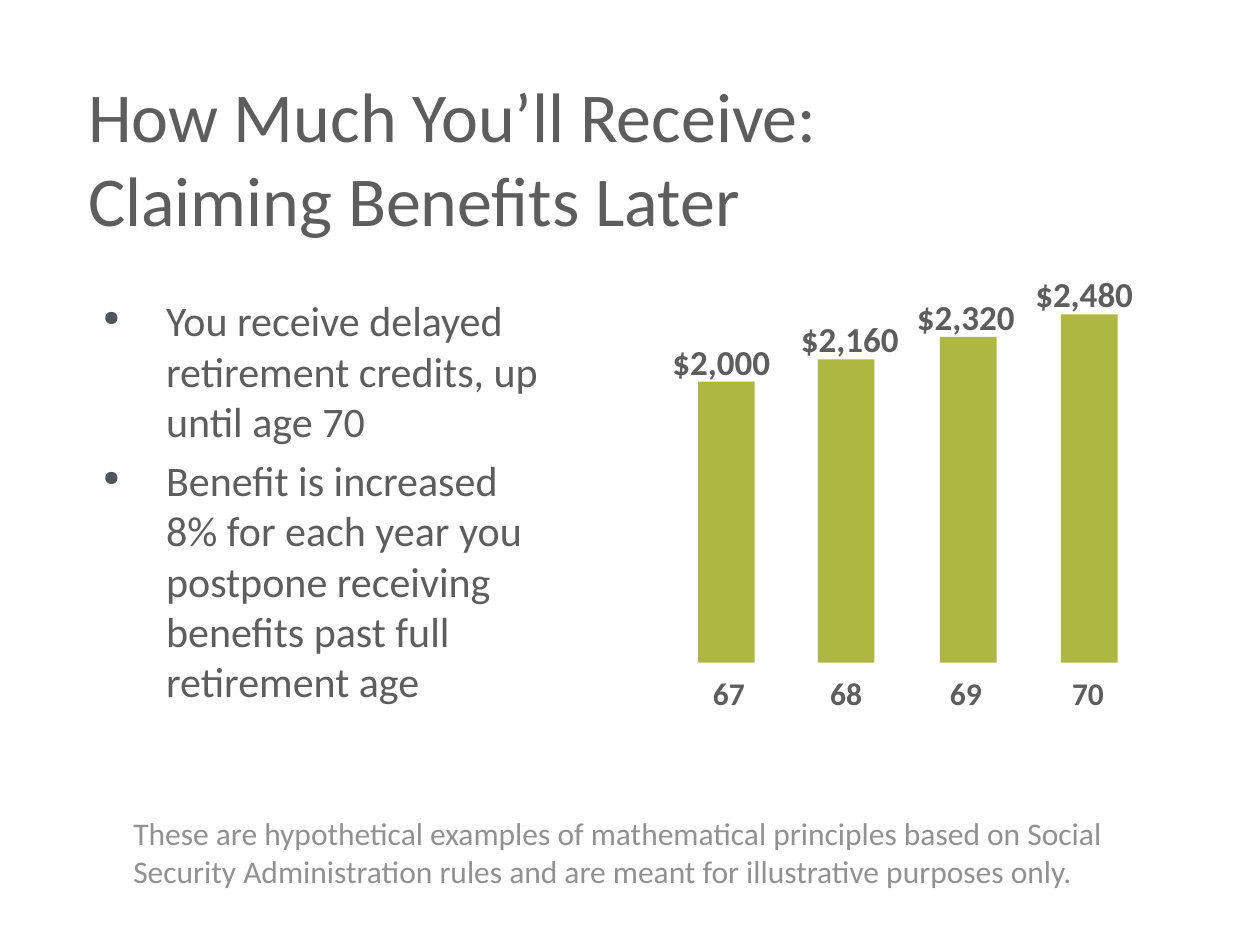
from dataclasses import dataclass

from lxml.etree import SubElement
from pptx import Presentation
from pptx.dml.color import RGBColor
from pptx.enum.shapes import MSO_SHAPE
from pptx.enum.text import MSO_ANCHOR, PP_ALIGN
from pptx.oxml.ns import qn
from pptx.slide import Slide
from pptx.util import Inches, Pt

GRAY = RGBColor(0x5D, 0x5D, 0x5D)
LIGHT_GRAY = RGBColor(0x91, 0x91, 0x91)
GREEN = RGBColor(0xAF, 0xB7, 0x43)
BULLET_COLOR = "4D565C"

BASELINE = 5.26
BAR_WIDTH = 0.45
INCHES_PER_DOLLAR = 0.001115
AMOUNT_RISE = 0.38  # from bar top up to the top of its amount box


@dataclass(frozen=True)
class TextBlock:
    left: float
    top: float
    width: float
    height: float
    paragraphs: tuple[str, ...]
    size: int
    color: RGBColor = GRAY
    bold: bool = False
    align: PP_ALIGN = PP_ALIGN.LEFT
    anchor: MSO_ANCHOR = MSO_ANCHOR.TOP
    wrap: bool = True
    bulleted: bool = False


@dataclass(frozen=True)
class AgeBenefit:
    age: int
    amount: int
    bar_left: float
    age_left: float
    amount_left: float


TITLE = TextBlock(0.6, 0.58, 7.99, 1.33,
                  ("How Much You’ll Receive: \vClaiming Benefits Later",),
                  40, anchor=MSO_ANCHOR.MIDDLE)
CREDITS = TextBlock(
    0.72, 2.29, 4.18, 3.42,
    ("You receive delayed retirement credits, up\vuntil age 70",
     "Benefit is increased \v8% for each year you postpone receiving "
     "benefits past full retirement age"),
    24, bulleted=True)
DISCLAIMER = TextBlock(
    0.96, 6.41, 8.03, 0.71,
    ("These are hypothetical examples of mathematical principles based on "
     "Social Security Administration rules and are meant for illustrative "
     "purposes only.",),
    18, LIGHT_GRAY)
BENEFITS = (
    AgeBenefit(67, 2000, 5.54, 5.48, 5.23),
    AgeBenefit(68, 2160, 6.49, 6.41, 6.25),
    AgeBenefit(69, 2320, 7.46, 7.36, 7.17),
    AgeBenefit(70, 2480, 8.42, 8.33, 8.11),
)


def add_bullet(paragraph) -> None:
    properties = paragraph._p.get_or_add_pPr()
    properties.set("marL", str(Inches(0.5)))
    properties.set("indent", str(Inches(-0.5)))
    color = SubElement(properties, qn("a:buClr"))
    SubElement(color, qn("a:srgbClr"), val=BULLET_COLOR)
    SubElement(properties, qn("a:buSzPct"), val="50000")
    SubElement(properties, qn("a:buChar"), char="●")


def add_text(slide: Slide, block: TextBlock) -> None:
    box = slide.shapes.add_textbox(Inches(block.left), Inches(block.top),
                                   Inches(block.width), Inches(block.height))
    frame = box.text_frame
    frame.word_wrap = block.wrap
    frame.vertical_anchor = block.anchor
    font_format = {"name": "Calibri", "size": Pt(block.size), "bold": block.bold}
    for index, content in enumerate(block.paragraphs):
        paragraph = frame.add_paragraph() if index else frame.paragraphs[0]
        paragraph.text = content
        paragraph.alignment = block.align
        if block.bulleted:
            add_bullet(paragraph)
        if index:
            paragraph.space_before = Pt(0.2 * block.size)
        for run in paragraph.runs:
            for attribute, value in font_format.items():
                setattr(run.font, attribute, value)
            run.font.color.rgb = block.color


def add_bar(slide: Slide, benefit: AgeBenefit) -> None:
    height = benefit.amount * INCHES_PER_DOLLAR
    top = BASELINE - height
    bar = slide.shapes.add_shape(MSO_SHAPE.RECTANGLE, Inches(benefit.bar_left),
                                 Inches(top), Inches(BAR_WIDTH), Inches(height))
    bar.shadow.inherit = False
    bar.fill.solid()
    bar.fill.fore_color.rgb = GREEN
    bar.line.fill.background()
    add_text(slide, TextBlock(benefit.age_left, 5.3, 0.61, 0.4,
                              (str(benefit.age),), 18, bold=True,
                              align=PP_ALIGN.CENTER))
    add_text(slide, TextBlock(benefit.amount_left, top - AMOUNT_RISE, 0.99, 0.44,
                              (f"${benefit.amount:,}",), 20, bold=True,
                              align=PP_ALIGN.CENTER, wrap=False))


def main() -> None:
    presentation = Presentation()
    presentation.slide_width = Inches(10)
    presentation.slide_height = Inches(7.5)
    slide = presentation.slides.add_slide(presentation.slide_layouts[6])

    # Title and bullet points
    add_text(slide, TITLE)
    add_text(slide, CREDITS)

    # Monthly benefit by claiming age
    for benefit in BENEFITS:
        add_bar(slide, benefit)

    # Disclaimer
    add_text(slide, DISCLAIMER)

    presentation.save("out.pptx")


if __name__ == "__main__":
    main()
